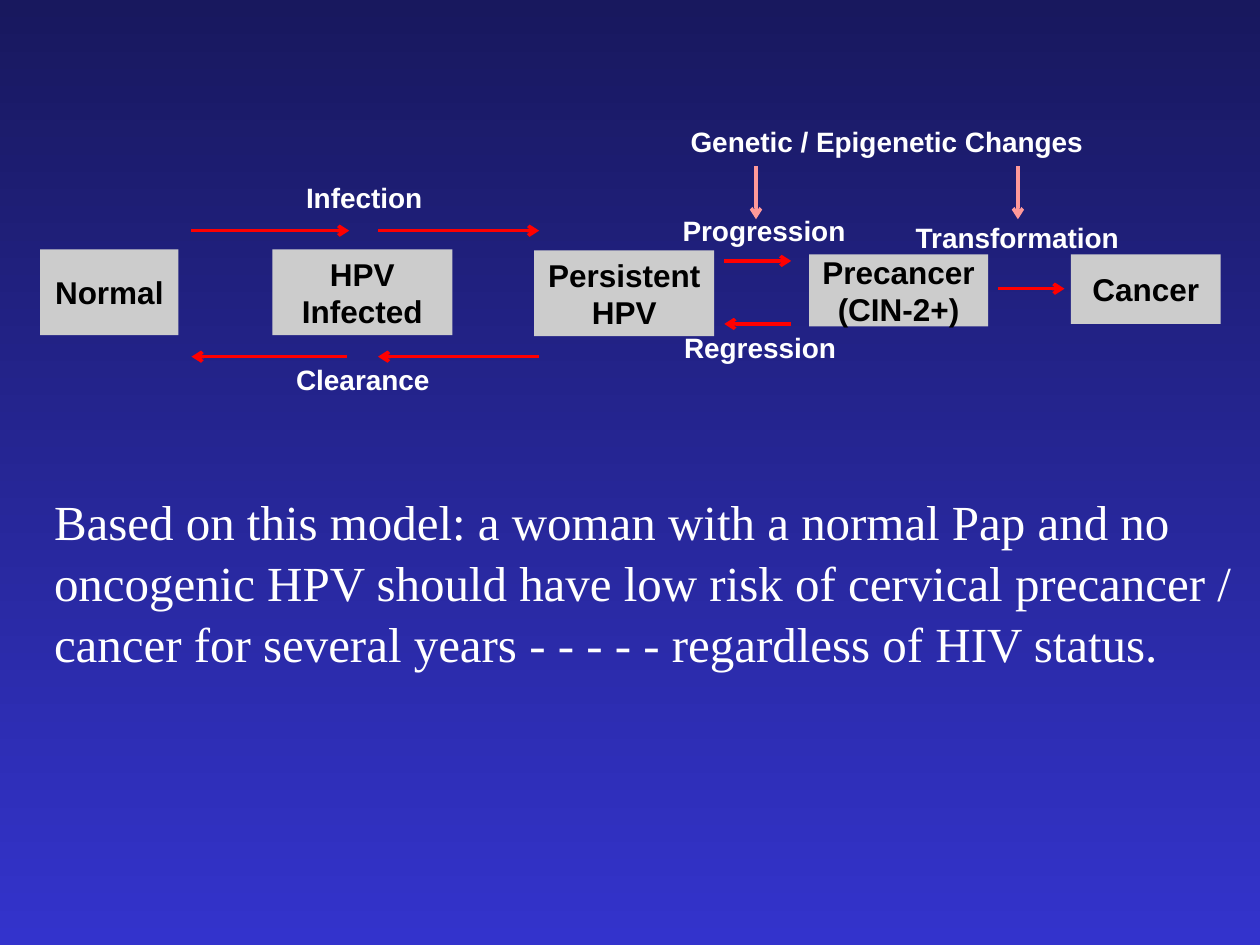
import lxml.etree
import pptx
import pptx.dml.color
import pptx.enum.shapes
import pptx.enum.text
import pptx.oxml.ns
import pptx.util

Cm = pptx.util.Cm
RGB = pptx.dml.color.RGBColor
ALIGN = pptx.enum.text.PP_ALIGN
FIT = pptx.enum.text.MSO_AUTO_SIZE
NAVY = RGB(0x18, 0x18, 0x5E)
BLUE = RGB(0x33, 0x33, 0xCC)
GREY = RGB(0xCC, 0xCC, 0xCC)
BLACK = RGB(0x00, 0x00, 0x00)
WHITE = RGB(0xFF, 0xFF, 0xFF)
RED = RGB(0xFF, 0x00, 0x00)
PINK = RGB(0xFF, 0x99, 0x99)

STAGES = [
    ("Normal", 0.81, 5.03, 2.79, 1.73, 0.25),
    ("HPV Infected", 5.49, 5.03, 3.63, 1.73, 0.25),
    ("Persistent\nHPV", 10.77, 5.05, 3.63, 1.73, 0.25),
    ("Precancer\n(CIN-2+)", 16.31, 5.13, 3.61, 1.45, 0),
    ("Cancer", 21.59, 5.13, 3.02, 1.4, 0.25),
]
LABELS = [
    ("Infection", 5.92, 3.51, 2.9),
    ("Clearance", 5.72, 7.19, 3.23),
    ("Progression", 13.51, 4.19, 3.84),
    ("Regression", 13.54, 6.53, 3.61),
    ("Transformation", 18.21, 4.32, 4.67),
]
STEPS = [
    (3.86, 7.04, 4.65),
    (7.62, 10.87, 4.65),
    (6.99, 3.86, 7.19),
    (10.87, 7.62, 7.19),
    (14.6, 15.95, 5.26),
    (15.95, 14.6, 6.53),
    (20.12, 21.46, 5.82),
]
BODY = ("Based on this model: a woman with a normal Pap and no oncogenic HPV "
        "should have low risk of cervical precancer / cancer for several years "
        "- - - - - regardless of HIV status.")


def write(frame, text, size=16, font="Arial", bold=True, color=WHITE,
          align=ALIGN.LEFT, wrap=True, fit=FIT.NONE, lead=None, gap=None):
    """Fill a text frame with one paragraph per line of text."""
    frame.text = text
    frame.word_wrap = wrap
    frame.auto_size = fit
    for para in frame.paragraphs:
        para.alignment = align
        para.line_spacing = lead
        para.space_before = gap
        face = para.runs[0].font
        face.size = pptx.util.Pt(size)
        face.name = font
        face.bold = bold
        face.color.rgb = color


def text_box(slide, text, left, top, width, height, **form):
    """Add a text box and return its frame."""
    box = slide.shapes.add_textbox(Cm(left), Cm(top), Cm(width), Cm(height))
    write(box.text_frame, text, **form)
    return box.text_frame


def stage(slide, text, left, top, width, height, inset):
    """Add one grey box of the disease model."""
    box = slide.shapes.add_shape(pptx.enum.shapes.MSO_SHAPE.RECTANGLE,
                                 Cm(left), Cm(top), Cm(width), Cm(height))
    box.shadow.inherit = False
    box.fill.solid()
    box.fill.fore_color.rgb = GREY
    box.line.fill.background()
    frame = box.text_frame
    frame.margin_left = frame.margin_right = Cm(inset)
    frame.vertical_anchor = pptx.enum.text.MSO_ANCHOR.MIDDLE
    write(frame, text, size=18, color=BLACK, align=ALIGN.CENTER)


def arrow(slide, x1, y1, x2, y2, color):
    """Add a straight line with an open arrowhead at its end."""
    line = slide.shapes.add_connector(pptx.enum.shapes.MSO_CONNECTOR.STRAIGHT,
                                      Cm(x1), Cm(y1), Cm(x2), Cm(y2))
    line.line.width = pptx.util.Pt(2)
    line.line.color.rgb = color
    qn = pptx.oxml.ns.qn
    lxml.etree.SubElement(line.line._get_or_add_ln(), qn("a:tailEnd"), type="arrow")
    lxml.etree.SubElement(line._element.spPr, qn("a:effectLst"))


def paint(slide):
    """Give the slide its vertical blue gradient."""
    fill = slide.background.fill
    fill.gradient()
    fill.gradient_angle = 270
    for stop, color, place in zip(fill.gradient_stops, (NAVY, BLUE), (0, 1)):
        stop.color.rgb = color
        stop.position = place


def main():
    """Build the slide and save it."""
    deck = pptx.Presentation()
    deck.slide_width, deck.slide_height = Cm(25.4), Cm(19.05)
    slide = deck.slides.add_slide(deck.slide_layouts[6])
    paint(slide)
    text_box(slide, BODY, 0.84, 9.73, 24.56, 3.94, size=28, bold=False,
             font="Times New Roman", lead=1.04, gap=pptx.util.Pt(2),
             fit=FIT.SHAPE_TO_FIT_TEXT)
    for item in STAGES:
        stage(slide, *item)
    for item in LABELS:
        text_box(slide, *item, 0.94, wrap=False, fit=FIT.SHAPE_TO_FIT_TEXT)
    for start, end, y in STEPS:
        arrow(slide, start, y, end, y, RED)
    frame = text_box(slide, "Genetic / Epigenetic Changes", 12.7, 2.51, 10.36, 0.84,
                     align=ALIGN.CENTER)
    frame.margin_left = frame.margin_right = frame.margin_top = 0
    for x in (15.24, 20.52):
        arrow(slide, x, 3.35, x, 4.42, PINK)
    deck.save("out.pptx")


if __name__ == "__main__":
    main()
